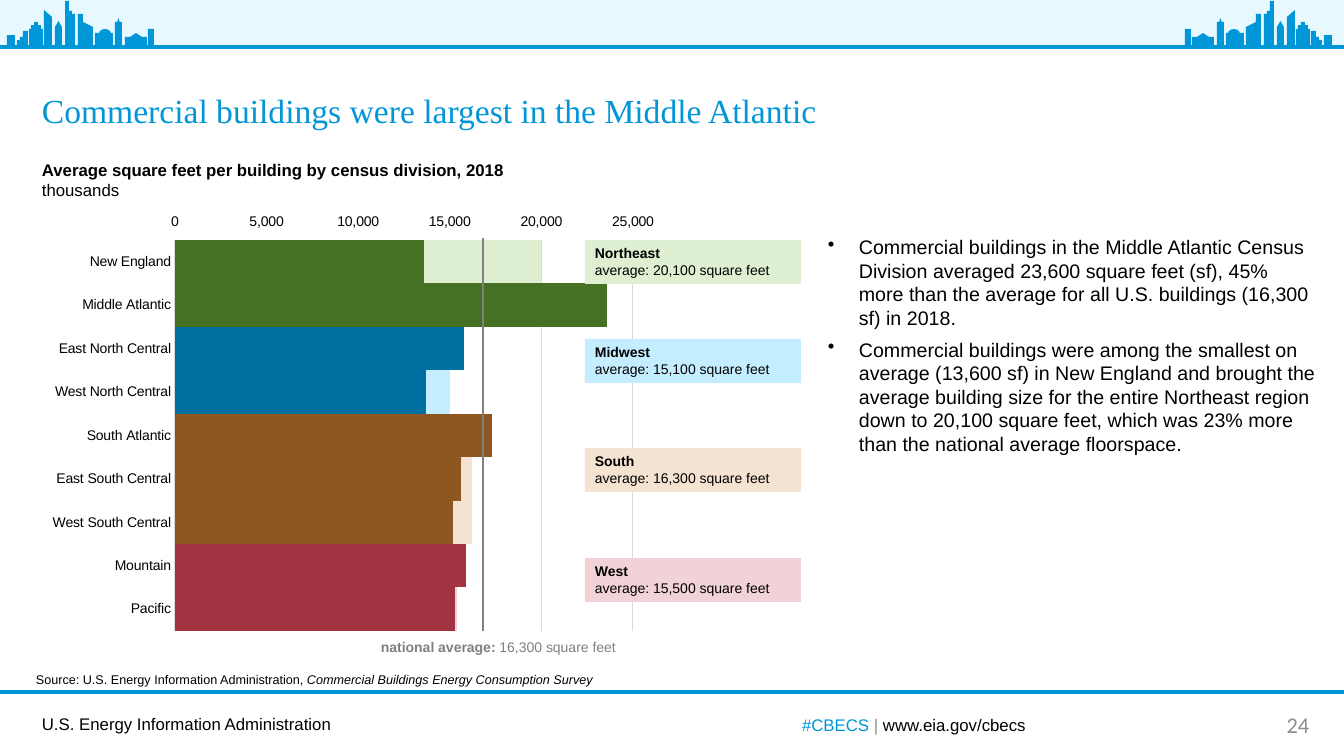
"""Build the slide on average commercial building size by census division."""
import copy

import lxml.etree
import pptx
import pptx.chart.axis
import pptx.chart.data
import pptx.dml.color
import pptx.enum.chart
import pptx.enum.shapes
import pptx.enum.text
import pptx.oxml
import pptx.oxml.ns
import pptx.util

SHAPE = pptx.enum.shapes.MSO_SHAPE
ALIGN = pptx.enum.text.PP_ALIGN
ANCHOR = pptx.enum.text.MSO_ANCHOR
EMU_PER_PX = 914400 / 100.8
PAGE_WIDTH, PAGE_HEIGHT = 1344, 756
BLUE, SKY, BLACK, GRAY, SILVER, PALE = "0096D7", "E7F8FF", "000000", "808080", "8C8C8C", "D9D9D9"

REGIONS = {
    "Northeast": ("467125", "DEF0D1", 240, "20,100"),
    "Midwest": ("0070A1", "C4EDFF", 339, "15,100"),
    "South": ("8E5620", "F5E3D1", 448, "16,300"),
    "West": ("A33340", "F1D2D6", 558, "15,500"),
}
DIVISIONS = [
    ("Pacific", "West", 77, 15300),
    ("Mountain", "West", 77, 15900),
    ("West South Central", "South", 81, 15200),
    ("East South Central", "South", 81, 15600),
    ("South Atlantic", "South", 81, 17300),
    ("West North Central", "Midwest", 75, 13700),
    ("East North Central", "Midwest", 75, 15800),
    ("Middle Atlantic", "Northeast", 100, 23600),
    ("New England", "Northeast", 100, 13600),
]
CHART_BOX = (32, 206, 634, 433)
PLOT_BOX = (175, 240, 458, 391)

SKYLINE_EDGES = 1339
SKYLINE = {
    SHAPE.RECTANGLE: [
        (7, 35, 8, 11), (17, 40, 3, 6), (20, 37, 3, 9), (23, 31, 5, 15), (29, 29, 14, 17),
        (31, 25, 10, 4), (34, 22, 4, 3), (44, 17, 8, 29), (55, 27, 7, 19), (65, 1, 4, 45),
        (69, 11, 3, 35), (72, 14, 3, 32), (78, 14, 5, 32), (83, 27, 10, 19), (95, 33, 18, 13),
        (115, 22, 7, 24), (125, 37, 22, 9), (148, 29, 6, 17)],
    SHAPE.RIGHT_TRIANGLE: [(44, 10, 8, 7), (83, 22, 10, 5)],
    SHAPE.ISOSCELES_TRIANGLE: [(55, 21, 7, 6), (115, 18, 7, 11), (130, 33, 12, 4)],
    SHAPE.OVAL: [(99, 29, 12, 9)],
}
RULES = [
    ((0, 47, PAGE_WIDTH, 47), BLUE, 3.5),
    ((0, 692, PAGE_WIDTH, 692), BLUE, 2.25),
    ((483, 238, 483, 631), GRAY, 1),
]

TITLE = [[("Commercial buildings were largest in the Middle Atlantic", BLUE, "")]]
HEADING = [
    [("Average square feet per building by census division, 2018", BLACK, "b")],
    [("thousands", BLACK, "")],
]
FINDINGS = [
    [("Commercial buildings in the Middle Atlantic Census Division averaged 23,600 square feet (sf), "
      "45% more than the average for all U.S. buildings (16,300 sf) in 2018.", BLACK, "")],
    [("Commercial buildings were among the smallest on average (13,600 sf) in New England and brought "
      "the average building size for the entire Northeast region down to 20,100 square feet, which was "
      "23% more than the national average floorspace.", BLACK, "")],
]
NATIONAL = [[("national average: ", GRAY, "b"), ("16,300 square feet", GRAY, "")]]
SOURCE = [[("Source: U.S. Energy Information Administration, ", BLACK, ""),
           ("Commercial Buildings Energy Consumption Survey", BLACK, "i")]]
AGENCY = [[("U.S. Energy Information Administration", BLACK, "")]]
LINKS = [[("#CBECS ", BLUE, ""), ("| ", SILVER, ""), ("www.eia.gov/cbecs", BLACK, "")]]
PAGE_NUMBER = [[("24", SILVER, "")]]


def px(*lengths):
    """Turn px lengths into EMU."""
    return [round(length * EMU_PER_PX) for length in lengths]


def color(value):
    """Turn a hex string into a colour."""
    return pptx.dml.color.RGBColor.from_string(value)


def paint(target, value):
    """Fill a shape, series or point with one colour."""
    target.fill.solid()
    target.fill.fore_color.rgb = color(value)


def write(box, paragraphs, size, font="Arial", align=ALIGN.LEFT, anchor=ANCHOR.TOP):
    """Write paragraphs of (text, colour, style) spans into a box."""
    frame = box.text_frame
    frame.word_wrap = True
    frame.vertical_anchor = anchor
    for index, spans in enumerate(paragraphs):
        para = frame.add_paragraph() if index else frame.paragraphs[0]
        para.alignment = align
        for text, hue, style in spans:
            span = para.add_run()
            span.text = text
            span.font.name, span.font.size = font, pptx.util.Pt(size)
            span.font.bold, span.font.italic = "b" in style, "i" in style
            span.font.color.rgb = color(hue)


def add_text(page, place, paragraphs, size, **options):
    """Add a text box and return it."""
    box = page.shapes.add_textbox(*px(*place))
    write(box, paragraphs, size, **options)
    return box


def add_block(page, kind, place, hue):
    """Add a filled shape without outline and return it."""
    block = page.shapes.add_shape(kind, *px(*place))
    block.shadow.inherit = False
    paint(block, hue)
    block.line.fill.background()
    return block


def add_rule(page, ends, hue, width):
    """Add a straight line."""
    rule = page.shapes.add_connector(pptx.enum.shapes.MSO_CONNECTOR.STRAIGHT, *px(*ends))
    rule.line.color.rgb = color(hue)
    rule.line.width = pptx.util.Pt(width)
    lxml.etree.SubElement(rule.element.spPr, pptx.oxml.ns.qn("a:effectLst"))


def add_skylines(page):
    """Draw the skyline on the left and mirror it on the right."""
    for kind, blocks in SKYLINE.items():
        for left, top, width, height in blocks:
            add_block(page, kind, (left, top, width, height), BLUE)
            mirrored = add_block(page, kind, (SKYLINE_EDGES - left - width, top, width, height), BLUE)
            mirrored.element.spPr.xfrm.set("flipH", "1")


def add_bullets(box):
    """Give each paragraph of a box a hanging bullet."""
    indent = px(31)[0]
    for para in box.text_frame.paragraphs:
        para.space_after = pptx.util.Pt(6)
        settings = para._p.get_or_add_pPr()
        settings.set("marL", str(indent))
        settings.set("indent", str(-indent))
        lxml.etree.SubElement(settings, pptx.oxml.ns.qn("a:buChar")).set("char", "•")


def place_plot(plot_area):
    """Fix the inner plot rectangle inside the chart."""
    left, top, width, height = CHART_BOX
    x, y, w, h = PLOT_BOX
    parts = {"x": (x - left) / width, "y": (y - top) / height, "w": w / width, "h": h / height}
    values = "".join(f'<c:{name} val="{part:.4f}"/>' for name, part in parts.items())
    for old in plot_area.xpath("c:layout"):
        plot_area.remove(old)
    plot_area.insert(0, pptx.oxml.parse_xml(
        f'<c:layout {pptx.oxml.ns.nsdecls("c")}><c:manualLayout><c:layoutTarget val="inner"/>'
        f'<c:xMode val="edge"/><c:yMode val="edge"/>{values}</c:manualLayout></c:layout>'))


def split_axes(plot_area):
    """Move the second series to axes of its own and return the new value axis."""
    bars = plot_area.xpath("c:barChart")[0]
    front = copy.deepcopy(bars)
    bars.addnext(front)
    bars.remove(bars.xpath("c:ser")[1])
    front.remove(front.xpath("c:ser")[0])
    category, value = [copy.deepcopy(plot_area.xpath(name)[0]) for name in ("c:catAx", "c:valAx")]
    plot_area.xpath("c:valAx")[0].addnext(value)
    value.addnext(category)
    new_ids = dict(zip([node.get("val") for node in front.xpath("c:axId")], ("5001", "5002")))
    for part in (front, category, value):
        for node in part.xpath("c:axId | c:crossAx"):
            node.set("val", new_ids[node.get("val")])
    value.xpath("c:axPos")[0].set("val", "t")
    value.xpath("c:crosses")[0].set("val", "max")
    pptx.chart.axis.CategoryAxis(category).visible = False
    return pptx.chart.axis.ValueAxis(value)


def add_size_chart(page):
    """Add division bars in front of regional average bars."""
    names, regions, averages, sizes = zip(*DIVISIONS)
    data = pptx.chart.data.CategoryChartData()
    data.categories = names
    data.add_series("Series 1", averages)
    data.add_series("Series 2", sizes)
    kind = pptx.enum.chart.XL_CHART_TYPE.BAR_CLUSTERED
    chart = page.shapes.add_chart(kind, *px(*CHART_BOX), data).chart
    chart.has_legend = chart.has_title = False
    chart.font.name, chart.font.size = "Arial", pptx.util.Pt(10)
    chart.font.color.rgb = color(BLACK)
    plot = chart.plots[0]
    plot.gap_width, plot.overlap, plot.vary_by_categories = 0, 100, False
    for series, hue, shade in zip(plot.series, (BLUE, "BD732A"), (1, 0)):
        paint(series.format, hue)
        series.invert_if_negative = False
        for index, region in enumerate(regions):
            paint(series.points[index].format, REGIONS[region][shade])
    tick = pptx.enum.chart.XL_TICK_MARK
    division_axis, average_axis = chart.category_axis, chart.value_axis
    division_axis.major_tick_mark = tick.NONE
    average_axis.major_tick_mark = tick.OUTSIDE
    average_axis.format.line.fill.background()
    plot_area = chart.element.xpath("//c:plotArea")[0]
    sizes_axis = split_axes(plot_area)
    for axis, top in ((average_axis, 125), (sizes_axis, 25000)):
        axis.minimum_scale, axis.maximum_scale, axis.major_unit = 0, top, top / 5
    sizes_axis.has_major_gridlines = False
    sizes_axis.tick_labels.number_format = "#,##0"
    sizes_axis.tick_labels.number_format_is_linked = False
    for outline in (division_axis.format.line, average_axis.major_gridlines.format.line):
        outline.color.rgb = color(PALE)
        outline.width = pptx.util.Pt(0.75)
    average_axis.visible = False
    place_plot(plot_area)


def main():
    """Build and save the slide."""
    deck = pptx.Presentation()
    deck.slide_width, deck.slide_height = px(PAGE_WIDTH, PAGE_HEIGHT)
    page = deck.slides.add_slide(deck.slide_layouts[6])
    add_block(page, SHAPE.RECTANGLE, (0, 0, PAGE_WIDTH, 45), SKY)
    add_skylines(page)
    add_size_chart(page)
    for rule in RULES:
        add_rule(page, *rule)
    add_text(page, (32, 51, 1279, 84), TITLE, 24, font="Times New Roman", anchor=ANCHOR.BOTTOM)
    add_text(page, (32, 155, 551, 50), HEADING, 12)
    add_bullets(add_text(page, (818, 230, 508, 233), FINDINGS, 14))
    add_text(page, (371, 634, 277, 27), NATIONAL, 10)
    add_text(page, (26, 667, 672, 25), SOURCE, 9)
    add_text(page, (32, 709, 373, 30), AGENCY, 12)
    add_text(page, (687, 705, 454, 40), LINKS, 12, align=ALIGN.CENTER, anchor=ANCHOR.MIDDLE)
    add_text(page, (1268, 705, 60, 40), PAGE_NUMBER, 16, font="Calibri",
             align=ALIGN.CENTER, anchor=ANCHOR.MIDDLE)
    for region, (_, light, top, average) in REGIONS.items():
        label = add_block(page, SHAPE.RECTANGLE, (585, top, 216, 44), light)
        write(label, [[(region, BLACK, "b")], [(f"average: {average} square feet", BLACK, "")]], 10)
    deck.save("out.pptx")


if __name__ == "__main__":
    main()
